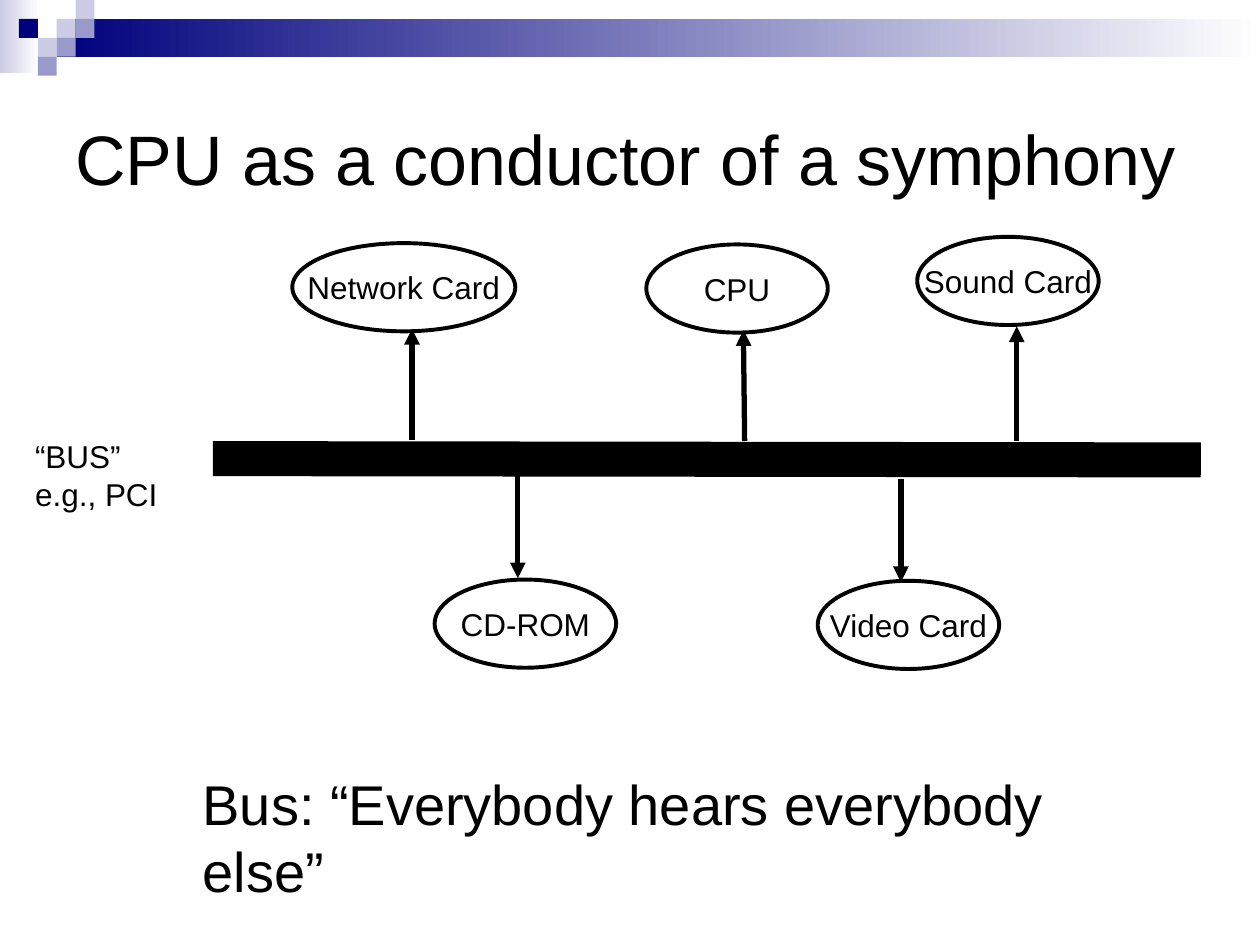
from typing import NamedTuple

from lxml.etree import SubElement
from pptx import Presentation
from pptx.dml.color import RGBColor
from pptx.enum.shapes import MSO_CONNECTOR as Connector, MSO_SHAPE as Preset
from pptx.enum.text import MSO_ANCHOR as Anchor, PP_ALIGN as Align
from pptx.oxml.ns import qn
from pptx.util import Inches, Pt

COLORS = {
    "ink": "000000",
    "paper": "FFFFFF",
    "navy": "00007D",
    "lavender": "CCCCE6",
    "violet": "9999CC",
}
FONT = "Arial"
COLUMNS, ROWS = 100, 75
TILE = 1.5
DEVICE_HEIGHT = 7


class Band(NamedTuple):
    col: float
    row: float
    cols: float
    rows: float
    start: str


class Tile(NamedTuple):
    col: int
    row: int
    color: str


class Device(NamedTuple):
    label: str
    col: float
    row: float
    cols: float = 14.4


class Link(NamedTuple):
    start_col: float
    start_row: float
    end_col: float
    end_row: float


BANDS = [
    Band(0, 0, 3.1, 5.8, "lavender"),
    Band(4.5, 1.5, 95.5, 3, "navy"),
]
TILES = [
    Tile(3, 1, "lavender"),
    Tile(4, 0, "lavender"),
    Tile(4, 1, "violet"),
    Tile(2, 2, "lavender"),
    Tile(1, 1, "navy"),
    Tile(3, 2, "violet"),
    Tile(2, 3, "violet"),
]
DEVICES = [
    Device("Network Card", 23.2, 19.3, 17.7),
    Device("CPU", 51.3, 19.4),
    Device("Sound Card", 72.8, 18.8),
    Device("CD-ROM", 34.5, 46),
    Device("Video Card", 64.9, 46.1),
]
BUS = Link(16.9, 36.4, 95.3, 36.5)
LINKS = [
    Link(32.7, 34.9, 32.7, 26.1),
    Link(59.1, 35, 59, 26.2),
    Link(80.7, 35, 80.7, 25.9),
    Link(41.1, 37.7, 41.1, 45.9),
    Link(71.5, 38, 71.5, 46.2),
]

deck = Presentation()
deck.slide_width, deck.slide_height = Inches(10), Inches(7.5)
slide = deck.slides.add_slide(deck.slide_layouts[6])


def rgb(name: str) -> RGBColor:
    return RGBColor.from_string(COLORS[name])


def across(cols: float) -> int:
    return round(deck.slide_width * cols / COLUMNS)


def down(rows: float) -> int:
    return round(deck.slide_height * rows / ROWS)


def cells(col: float, row: float, cols: float, rows: float) -> tuple[int, int, int, int]:
    return across(col), down(row), across(cols), down(rows)


def write(shape, text: str, *, size: float = 18, align=Align.LEFT,
          anchor=Anchor.TOP, wrap: bool = False) -> None:
    frame = shape.text_frame
    frame.word_wrap = wrap
    frame.vertical_anchor = anchor
    paragraph = frame.paragraphs[0]
    paragraph.text = text
    paragraph.alignment = align
    for run in paragraph.runs:
        run.font.name = FONT
        run.font.size = Pt(size)
        run.font.color.rgb = rgb("ink")


def add_preset(preset, col: float, row: float, cols: float, rows: float):
    shape = slide.shapes.add_shape(preset, *cells(col, row, cols, rows))
    shape.shadow.inherit = False
    return shape


def draw_band(band: Band) -> None:
    shape = add_preset(Preset.RECTANGLE, band.col, band.row, band.cols, band.rows)
    shape.line.fill.background()
    shape.fill.gradient()
    shape.fill.gradient_angle = 0
    for stop, color in zip(shape.fill.gradient_stops, (band.start, "paper")):
        stop.color.rgb = rgb(color)


def draw_tile(tile: Tile) -> None:
    shape = add_preset(Preset.RECTANGLE, tile.col * TILE, tile.row * TILE, TILE, TILE)
    shape.line.fill.background()
    shape.fill.solid()
    shape.fill.fore_color.rgb = rgb(tile.color)


def draw_device(device: Device) -> None:
    oval = add_preset(Preset.OVAL, device.col, device.row, device.cols, DEVICE_HEIGHT)
    oval.fill.background()
    oval.line.color.rgb = rgb("ink")
    oval.line.width = Pt(2.25)
    write(oval, device.label, align=Align.CENTER, anchor=Anchor.MIDDLE)


def draw_link(link: Link, *, width: float = 3, arrow: bool = True) -> None:
    line = slide.shapes.add_connector(
        Connector.STRAIGHT,
        across(link.start_col), down(link.start_row),
        across(link.end_col), down(link.end_row),
    )
    line.line.color.rgb = rgb("ink")
    line.line.width = Pt(width)
    if arrow:
        SubElement(line.line._get_or_add_ln(), qn("a:tailEnd"), type="triangle")
    SubElement(line._element.spPr, qn("a:effectLst"))


def add_caption(text: str, col: float, row: float, cols: float, rows: float, **style) -> None:
    write(slide.shapes.add_textbox(*cells(col, row, cols, rows)), text, **style)


for band in BANDS:
    draw_band(band)
for tile in TILES:
    draw_tile(tile)
add_caption("CPU as a conductor of a symphony", 5, 5, 90, 15,
            size=40, anchor=Anchor.MIDDLE, wrap=True)
draw_link(BUS, width=20, arrow=False)
for device in DEVICES:
    draw_device(device)
for link in LINKS:
    draw_link(link)
add_caption("“BUS”\ve.g., PCI", 1.8, 34.2, 11.7, 7)
add_caption("Bus: “Everybody hears everybody else”", 15.1, 60.6, 79, 6.3,
            size=32, wrap=True)

deck.save("out.pptx")
